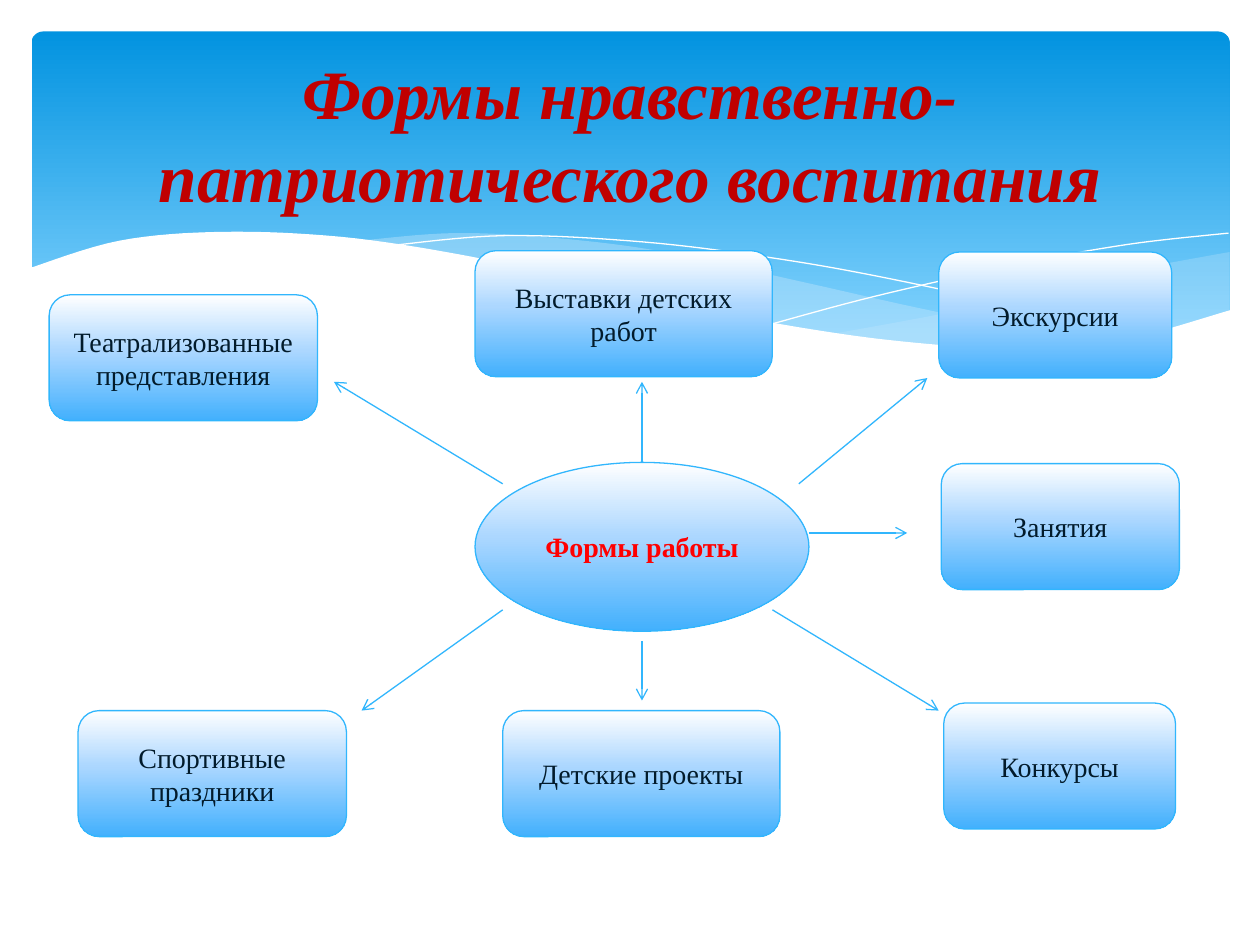
from dataclasses import dataclass

from lxml import etree
from pptx import Presentation
from pptx.dml.color import RGBColor
from pptx.enum.shapes import MSO_CONNECTOR, MSO_SHAPE
from pptx.enum.text import MSO_ANCHOR, PP_ALIGN
from pptx.oxml.ns import qn
from pptx.util import Inches, Pt

ROUNDED, OVAL = MSO_SHAPE.ROUNDED_RECTANGLE, MSO_SHAPE.OVAL
STRAIGHT = MSO_CONNECTOR.STRAIGHT
MIDDLE, CENTER = MSO_ANCHOR.MIDDLE, PP_ALIGN.CENTER
TOP_SITE = 0


@dataclass(frozen=True)
class Theme:
    font: str = "Times New Roman"
    title_size: float = 39.6
    label_size: float = 16
    line_width: float = 0.75
    title: str = "C00000"
    hub_text: str = "FF0000"
    box_text: str = "021B2B"
    outline: str = "31B6FD"
    white: str = "FFFFFF"
    mist: str = "C6E7FC"
    banner: tuple = ((0, "0293E0"), (90, "83D3FE"))
    node: tuple = ((0, "FFFFFF"), (44, "ACD7FF"), (100, "42B0FD"))


def smooth(knots, steps=8):
    """Points of a Catmull-Rom curve that passes through the knots."""
    padded = [knots[0], *knots, knots[-1]]
    points = [knots[0]]
    for quad in zip(padded, padded[1:], padded[2:], padded[3:]):
        for step in range(1, steps + 1):
            t = step / steps
            points.append(tuple(
                b + t * (c - a) / 2 + t**2 * (2 * a - 5 * b + 4 * c - d) / 2
                + t**3 * (3 * b - a - 3 * c + d) / 2
                for a, b, c, d in zip(*quad)))
    return points


def band(upper, lower):
    """Closed outline between two edges that both run left to right."""
    return upper + lower[::-1]


def write_text(shape, text, *, font, size, color, bold=False, italic=False):
    frame = shape.text_frame
    frame.word_wrap = True
    frame.vertical_anchor = MIDDLE
    para = frame.paragraphs[0]
    para.alignment = CENTER
    span = para.add_run()
    span.text = text
    span.font.name, span.font.size = font, Pt(size)
    span.font.bold, span.font.italic = bold, italic
    span.font.color.rgb = RGBColor.from_string(color)


class SlideBuilder:
    def __init__(self, page, theme):
        self.page, self.theme = page, theme

    def gradient(self, shape, stops):
        shape.fill.gradient()
        shape.fill.gradient_angle = 270  # top to bottom
        stop_list = shape._element.spPr.find(qn("a:gradFill")).find(qn("a:gsLst"))
        for stop in list(stop_list):
            stop_list.remove(stop)
        for percent, color in stops:
            stop = etree.SubElement(stop_list, qn("a:gs"), pos=str(percent * 1000))
            etree.SubElement(stop, qn("a:srgbClr"), val=color)

    def outline(self, shape, color, width):
        shape.line.color.rgb = RGBColor.from_string(color)
        shape.line.width = Pt(width)

    def preset(self, kind, place, stops):
        shape = self.page.shapes.add_shape(kind, *map(Inches, place))
        shape.shadow.inherit = False
        self.gradient(shape, stops)
        return shape

    def banner(self, place):
        shape = self.preset(ROUNDED, place, self.theme.banner)
        shape.adjustments[0] = 0.034
        shape.line.fill.background()

    def node(self, kind, place, text, color, bold=False):
        shape = self.preset(kind, place, self.theme.node)
        self.outline(shape, self.theme.outline, self.theme.line_width)
        write_text(shape, text, font=self.theme.font, size=self.theme.label_size,
                   color=color, bold=bold)
        return shape

    def title(self, place, text):
        box = self.page.shapes.add_textbox(*map(Inches, place))
        write_text(box, text, font=self.theme.font, size=self.theme.title_size,
                   color=self.theme.title, bold=True, italic=True)

    def freeform(self, points, close):
        start, *rest = [(Inches(x), Inches(y)) for x, y in points]
        builder = self.page.shapes.build_freeform(*start)
        builder.add_line_segments(rest, close=close)
        shape = builder.convert_to_shape()
        shape.shadow.inherit = False
        return shape

    def wave(self, points, color, opacity=100):
        shape = self.freeform(points, close=True)
        shape.fill.solid()
        shape.fill.fore_color.rgb = RGBColor.from_string(color)
        shape.line.fill.background()
        if opacity < 100:
            tint = shape._element.spPr.find(qn("a:solidFill"))[0]
            etree.SubElement(tint, qn("a:alpha"), val=str(opacity * 1000))

    def curve(self, points):
        shape = self.freeform(points, close=False)
        shape.fill.background()
        self.outline(shape, self.theme.white, 0)

    def arrow(self, start, end):
        arrow = self.page.shapes.add_connector(STRAIGHT, *map(Inches, start + end))
        self.outline(arrow, self.theme.outline, self.theme.line_width)
        properties = arrow._element.spPr
        etree.SubElement(properties.find(qn("a:ln")), qn("a:tailEnd"), type="arrow")
        etree.SubElement(properties, qn("a:effectLst"))
        return arrow


# Banner edges: a few knots each, left to right
RIGHT_CREST = smooth([(6.61, 2.65), (7.53, 2.48), (8.32, 2.3), (9.06, 2.13), (9.76, 2)])
RIGHT_TROUGH = smooth([(6.61, 2.65), (7.32, 2.74), (8.03, 2.78), (8.72, 2.74),
                       (9.28, 2.63), (9.76, 2.47)])
MIDDLE_CREST = smooth([(2.86, 1.91), (3.61, 1.85), (4.42, 1.89), (5.28, 2),
                       (6.29, 2.22), (7.41, 2.47), (8.37, 2.65), (8.93, 2.73)])
MIDDLE_TROUGH = smooth([(2.86, 1.91), (3.62, 2.03), (4.49, 2.22), (5.66, 2.48),
                        (6.65, 2.66), (7.48, 2.76), (8.18, 2.78), (8.93, 2.73)])
FALLING_CURVE = smooth([(3.09, 1.95), (4.01, 1.87), (5.1, 1.92), (6.08, 2.04),
                        (6.95, 2.19), (7.95, 2.41), (9.07, 2.72)])
RISING_CURVE = smooth([(6.13, 2.57), (6.95, 2.35), (8.06, 2.1), (8.95, 1.94),
                       (9.75, 1.85)])
WHITE_CREST = smooth([(0.23, 2.13), (0.95, 1.91), (1.77, 1.84), (2.71, 1.88),
                      (3.65, 2.02), (4.47, 2.2), (5.55, 2.45), (6.48, 2.62),
                      (7.26, 2.72), (8.09, 2.77), (8.87, 2.71), (9.77, 2.46)])
WHITE_BASE = [(0.23, 3.29), (9.77, 3.29)]

# Hub geometry, from which the arrows start
HUB_LEFT, HUB_TOP, HUB_WIDTH, HUB_HEIGHT = HUB = (3.77, 3.67, 2.65, 1.34)
HUB_CENTER, HUB_RIGHT = HUB_LEFT + HUB_WIDTH / 2, HUB_LEFT + HUB_WIDTH
UPPER_START, SIDE_START, LOWER_START = 3.84, 4.23, 4.84
HUB_TOP_POINT = (HUB_CENTER, HUB_TOP)

# Each box: label, (left, top, width), then its arrow's start and end
BOX_HEIGHT = 1
SPOKES = [
    ("Экскурсии", (7.45, 2, 1.85), (6.34, UPPER_START), (7.36, 3)),
    ("Занятия", (7.47, 3.68, 1.89), (HUB_RIGHT, SIDE_START), (7.2, SIDE_START)),
    ("Выставки детских работ", (3.77, 1.99, 2.36), HUB_TOP_POINT, (HUB_CENTER, 3.03)),
    ("Театрализованные представления", (0.39, 2.34, 2.13),
     (3.99, UPPER_START), (2.65, 3.03)),
    ("Конкурсы", (7.49, 5.58, 1.84), (6.13, LOWER_START), (7.45, 5.64)),
    ("Детские проекты", (3.99, 5.64, 2.2), (HUB_CENTER, 5.09), (HUB_CENTER, 5.56)),
    ("Спортивные праздники", (0.62, 5.64, 2.13), (3.99, LOWER_START), (2.87, 5.64)),
]


def main():
    deck = Presentation()
    deck.slide_width, deck.slide_height = Inches(10), Inches(7.5)
    theme = Theme()
    slide = SlideBuilder(deck.slides.add_slide(deck.slide_layouts[6]), theme)

    # Banner with waves
    slide.banner((0.25, 0.25, 9.51, 2.7))
    slide.wave(band(RIGHT_CREST, RIGHT_TROUGH), theme.mist, opacity=29)
    slide.wave(band(MIDDLE_CREST, MIDDLE_TROUGH), theme.mist, opacity=40)
    slide.curve(FALLING_CURVE)
    slide.curve(RISING_CURVE)
    slide.wave(band(WHITE_CREST, WHITE_BASE), theme.white)
    slide.title((0.5, 0.37, 9, 1.37), "Формы нравственно-патриотического воспитания")

    # Hub, surrounding boxes and the arrows to them
    hub = slide.node(OVAL, HUB, "Формы работы", theme.hub_text, bold=True)
    for label, place, start, end in SPOKES:
        slide.node(ROUNDED, (*place, BOX_HEIGHT), label, theme.box_text)
        arrow = slide.arrow(start, end)
        if start == HUB_TOP_POINT:
            arrow.begin_connect(hub, TOP_SITE)

    deck.save("out.pptx")


if __name__ == "__main__":
    main()
